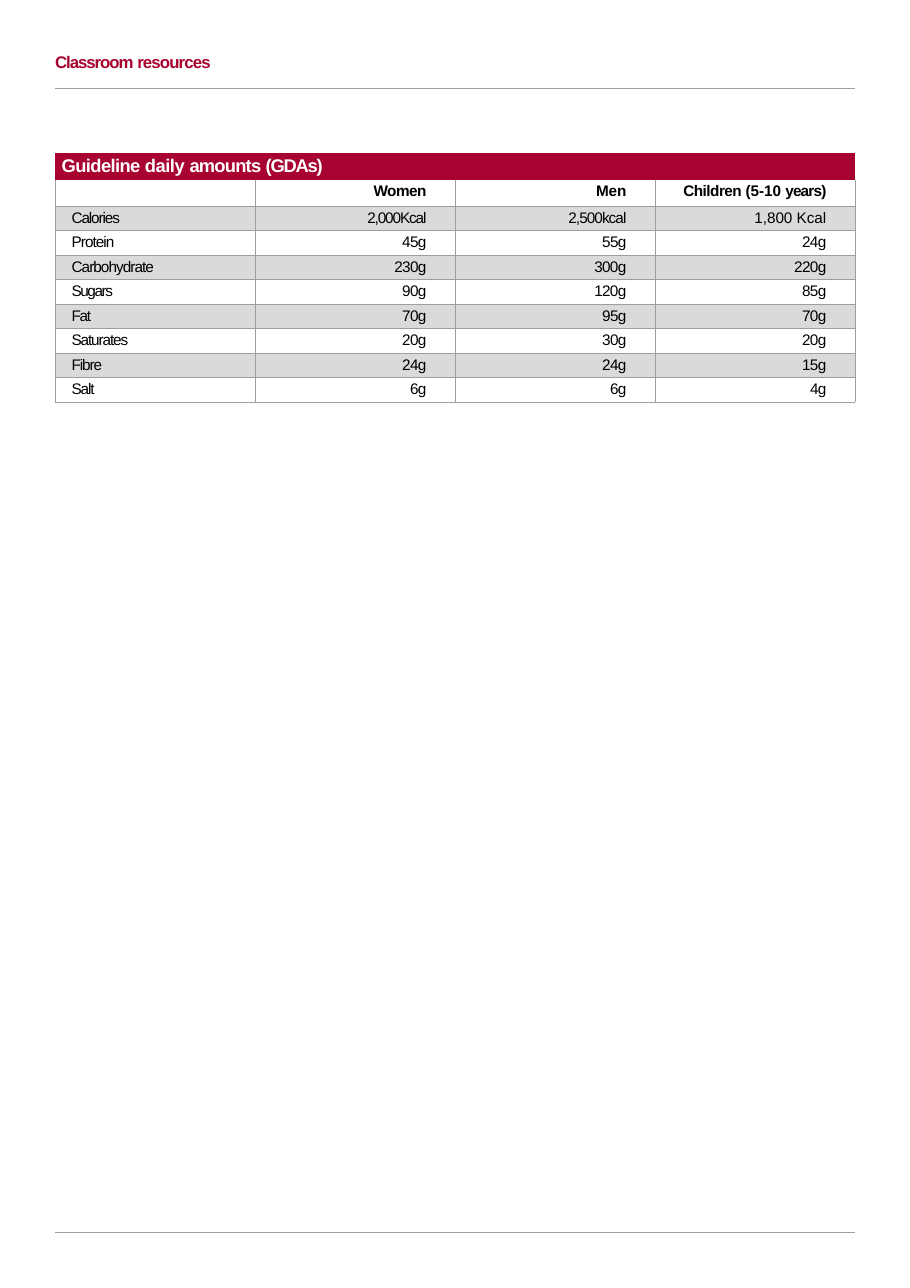
from lxml import etree
from pptx import Presentation
from pptx import util as u
from pptx.dml.color import RGBColor
from pptx.enum import shapes, text
from pptx.oxml import ns

CRIMSON = RGBColor(0xA7, 0x02, 0x30)
GREY = RGBColor(0x9C, 0x9E, 0x9F)
BAND = RGBColor(0xD9, 0xDA, 0xDB)
WHITE = RGBColor(0xFF, 0xFF, 0xFF)
BLACK = RGBColor(0x00, 0x00, 0x00)
PLAIN_TABLE = "{2D5ABB26-0587-4C30-8999-92F81FD0307C}"
LEFT, WIDTH = 0.5, 7.26
RULE_TOPS = (0.8, 11.19)
TABLE_TOP, TABLE_HEIGHT, HEADING_HEIGHT = 1.39, 2.26, 0.24

PAGE_TITLE = [("Classroom ", -0.7), ("resources", -0.6)]
TABLE_TITLE = [("Guideline ", -0.4), ("daily ", -0.3), ("amounts ", -0.5), ("(GDAs)", -0.8)]
GROUPS = [
    [("Women", -0.3)],
    [("Men", -0.1)],
    [("Children ", -0.3), ("(5-10 ", 0), ("years)", -0.5)],
]
NUTRIENTS = [
    ("Calories", -0.7, ("2,000Kcal", "2,500kcal", "1,800 Kcal"), (-0.7, -0.6, 0)),
    ("Protein", -0.6, ("45g", "55g", "24g"), (-0.4,) * 3),
    ("Carbohydrate", -0.6, ("230g", "300g", "220g"), (-0.4,) * 3),
    ("Sugars", -0.9, ("90g", "120g", "85g"), (-0.4,) * 3),
    ("Fat", -0.8, ("70g", "95g", "70g"), (-0.4,) * 3),
    ("Saturates", -0.7, ("20g", "30g", "20g"), (-0.4,) * 3),
    ("Fibre", -0.7, ("24g", "24g", "15g"), (-0.4,) * 3),
    ("Salt", -0.7, ("6g", "6g", "4g"), (-0.5,) * 3),
]


class Sheet:
    font = "Arial"
    line_width = u.Pt(0.5)

    def __init__(self, presentation):
        self.slide = presentation.slides.add_slide(presentation.slide_layouts[5])

    def add_text(self, paragraph, pieces, size, color, bold, align=text.PP_ALIGN.LEFT):
        paragraph.alignment = align
        for words, spacing in pieces:
            run = paragraph.add_run()
            run.text = words
            run.font.name = self.font
            run.font.size = u.Pt(size)
            run.font.bold = bold
            run.font.color.rgb = color
            run.font._element.set("spc", str(round(spacing * 100)))
        etree.SubElement(paragraph._p, ns.qn("a:endParaRPr"), sz=str(size * 100))

    def title(self, pieces, left, top, width, height):
        shape = self.slide.shapes.title
        shape.left, shape.top = u.Inches(left), u.Inches(top)
        shape.width, shape.height = u.Inches(width), u.Inches(height)
        frame = shape.text_frame
        frame.auto_size = text.MSO_AUTO_SIZE.NONE
        frame.word_wrap = False
        frame.vertical_anchor = text.MSO_ANCHOR.TOP
        frame.margin_left = frame.margin_top = u.Inches(0.01)
        frame.margin_right = frame.margin_bottom = 0
        self.add_text(frame.paragraphs[0], pieces, 11, CRIMSON, True)

    def rule(self, top):
        line = self.slide.shapes.add_connector(
            shapes.MSO_CONNECTOR.STRAIGHT,
            u.Inches(LEFT), u.Inches(top), u.Inches(LEFT + WIDTH), u.Inches(top))
        line.line.color.rgb = GREY
        line.line.width = self.line_width
        etree.SubElement(line._element.spPr, ns.qn("a:effectLst"))

    def table(self, rows, columns, top, height, heading_height):
        frame = self.slide.shapes.add_table(
            rows, columns, u.Inches(LEFT), u.Inches(top), u.Inches(WIDTH), u.Inches(height))
        table = frame.table
        table.first_row = table.horz_banding = False
        table._tbl.tblPr.find(ns.qn("a:tableStyleId")).text = PLAIN_TABLE
        body_height = (height - 2 * heading_height) / (rows - 2)
        for index, row in enumerate(table.rows):
            row.height = u.Inches(heading_height if index < 2 else body_height)
        for column in table.columns:
            column.width = u.Inches(WIDTH / columns)
        return table

    def borders(self, cell, sides):
        properties = cell._tc.get_or_add_tcPr()
        for side in sides:
            line = etree.SubElement(properties, ns.qn(f"a:ln{side}"), w=str(self.line_width))
            fill = etree.SubElement(line, ns.qn("a:solidFill"))
            etree.SubElement(fill, ns.qn("a:srgbClr"), val=str(GREY))

    def cell(self, cell, pieces, size=10, color=BLACK, bold=False, fill=None,
             sides="LRTB", indent=0.15, top=0.03, right=None):
        self.borders(cell, sides)
        if fill is None:
            cell.fill.background()
        else:
            cell.fill.solid()
            cell.fill.fore_color.rgb = fill
        cell.vertical_anchor = text.MSO_ANCHOR.TOP
        cell.margin_left = u.Inches(indent if right is None else 0)
        cell.margin_right = u.Inches(right or 0)
        cell.margin_top = u.Inches(top)
        cell.margin_bottom = 0
        align = text.PP_ALIGN.LEFT if right is None else text.PP_ALIGN.RIGHT
        self.add_text(cell.text_frame.paragraphs[0], pieces, size, color, bold, align)


def main():
    presentation = Presentation()
    presentation.slide_width = u.Inches(8.26)
    presentation.slide_height = u.Inches(11.69)
    sheet = Sheet(presentation)
    sheet.title(PAGE_TITLE, 0.49, 0.46, 1.45, 0.21)
    for top in RULE_TOPS:
        sheet.rule(top)

    columns = len(GROUPS) + 1
    table = sheet.table(len(NUTRIENTS) + 2, columns, TABLE_TOP, TABLE_HEIGHT, HEADING_HEIGHT)
    table.cell(0, 0).merge(table.cell(0, columns - 1))
    sheet.cell(table.cell(0, 0), TABLE_TITLE, 12, WHITE, True, CRIMSON,
               sides="", indent=0.06, top=0.02)
    for column, pieces in enumerate([[]] + GROUPS):
        sheet.cell(table.cell(1, column), pieces, bold=True, sides="LRB", right=0.26)
    for row, (name, name_spacing, amounts, spacings) in enumerate(NUTRIENTS, 2):
        fill = BAND if row % 2 == 0 else None
        sheet.cell(table.cell(row, 0), [(name, name_spacing)], fill=fill)
        for column, piece in enumerate(zip(amounts, spacings), 1):
            sheet.cell(table.cell(row, column), [piece], fill=fill, right=0.26)
    presentation.save("out.pptx")


if __name__ == "__main__":
    main()
